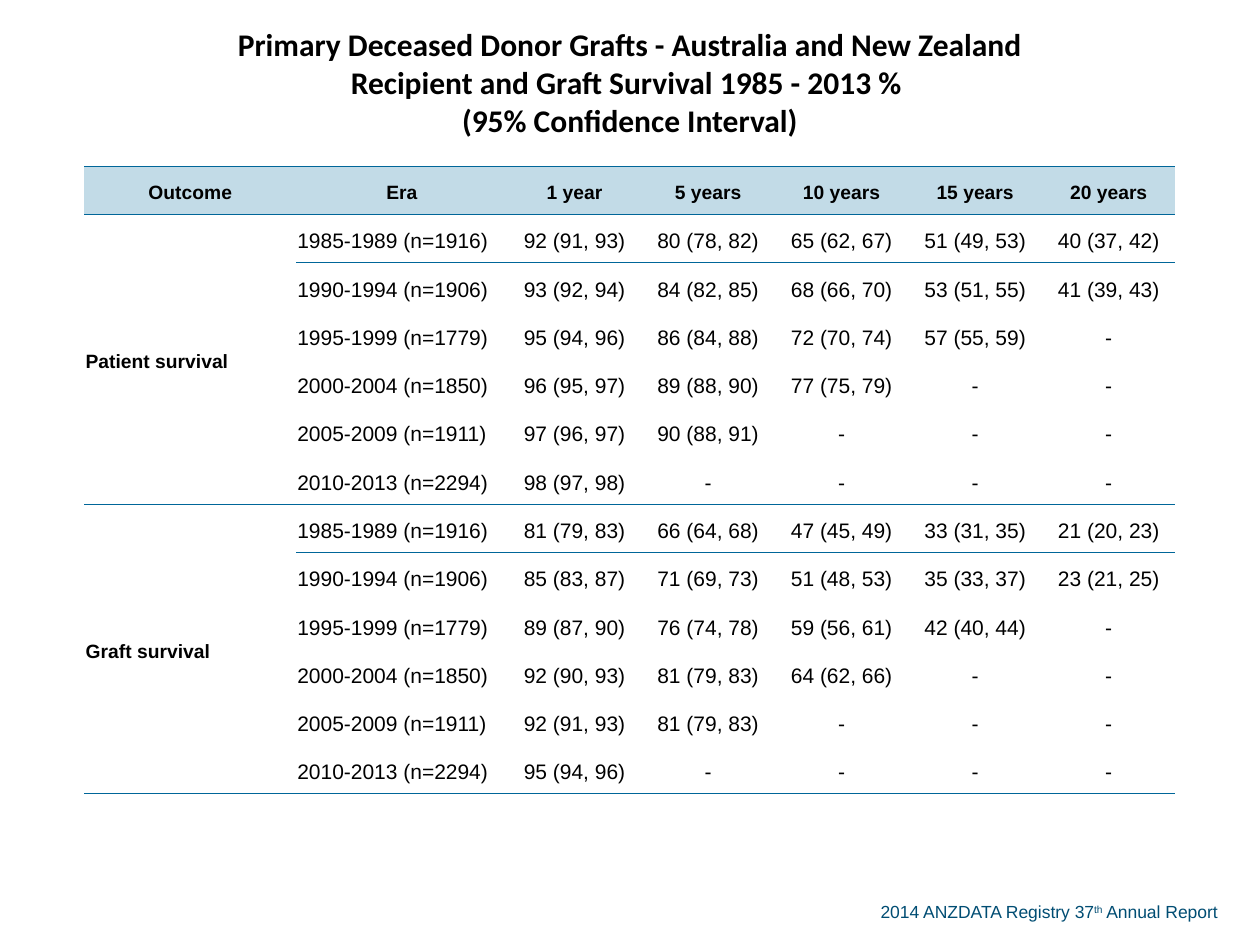
from lxml import etree
from pptx import Presentation
from pptx import util as u
from pptx.dml.color import RGBColor
from pptx.enum import text
from pptx.oxml.ns import qn

COLORS = {"text": "000000", "rule": "006699", "header": "C2DBE7", "footer": "004D73"}
WIDTH, HEIGHT = u.Inches(10), u.Inches(7.5)
NO_GRID_STYLE = "{2D5ABB26-0587-4C30-8999-92F81FD0307C}"

TITLE = ("Primary Deceased Donor Grafts - Australia and New Zealand\v"
         "Recipient and Graft Survival 1985 - 2013 % \n(95% Confidence Interval)")
HEADERS = ["Outcome", "Era", "1 year", "5 years", "10 years", "15 years", "20 years"]
ERAS = ["1985-1989 (n=1916)", "1990-1994 (n=1906)", "1995-1999 (n=1779)",
        "2000-2004 (n=1850)", "2005-2009 (n=1911)", "2010-2013 (n=2294)"]
SURVIVAL = {
    "Patient survival": [
        ["92 (91, 93)", "80 (78, 82)", "65 (62, 67)", "51 (49, 53)", "40 (37, 42)"],
        ["93 (92, 94)", "84 (82, 85)", "68 (66, 70)", "53 (51, 55)", "41 (39, 43)"],
        ["95 (94, 96)", "86 (84, 88)", "72 (70, 74)", "57 (55, 59)"],
        ["96 (95, 97)", "89 (88, 90)", "77 (75, 79)"],
        ["97 (96, 97)", "90 (88, 91)"],
        ["98 (97, 98)"],
    ],
    "Graft survival": [
        ["81 (79, 83)", "66 (64, 68)", "47 (45, 49)", "33 (31, 35)", "21 (20, 23)"],
        ["85 (83, 87)", "71 (69, 73)", "51 (48, 53)", "35 (33, 37)", "23 (21, 25)"],
        ["89 (87, 90)", "76 (74, 78)", "59 (56, 61)", "42 (40, 44)"],
        ["92 (90, 93)", "81 (79, 83)", "64 (62, 66)"],
        ["92 (91, 93)", "81 (79, 83)"],
        ["95 (94, 96)"],
    ],
}
COLS = len(HEADERS)
FIRST_ROW = 2
ROWS = FIRST_ROW + len(ERAS) * len(SURVIVAL)
COL_WIDTHS = [1.68] * 2 + [1.06] * 5
TITLE_HEIGHT, BODY_HEIGHT = 1.32, 4.98
# Row boundaries that carry a horizontal rule
RULES = {1, *range(FIRST_ROW, ROWS + 1, len(ERAS))}


def color(name):
    return RGBColor.from_string(COLORS[name])


def style_font(font, size, name="Arial", bold=False, ink="text"):
    font.size, font.name, font.bold = u.Pt(size), name, bold
    font.color.rgb = color(ink)


def add_rule(cell, side):
    ln = etree.SubElement(cell._tc.get_or_add_tcPr(), qn(f"a:{side}"), w=str(u.Pt(0.5)))
    fill = etree.SubElement(ln, qn("a:solidFill"))
    etree.SubElement(fill, qn("a:srgbClr"), val=COLORS["rule"])


def frame_cell(cell, row):
    """Set margins, rules and fill by the cell's place in the grid."""
    cell.margin_left = cell.margin_right = cell.margin_top = u.Inches(0.01)
    cell.margin_bottom = 0
    cell.vertical_anchor = text.MSO_ANCHOR.MIDDLE
    if row in RULES:
        add_rule(cell, "lnT")
    if row + (cell.span_height if cell.is_merge_origin else 1) in RULES:
        add_rule(cell, "lnB")
    if row == 1:
        cell.fill.solid()
        cell.fill.fore_color.rgb = color("header")
    else:
        cell.fill.background()


def write_cell(cell, words, size, bold=False, centred=True):
    cell.text_frame.text = words
    p = cell.text_frame.paragraphs[0]
    p.alignment = text.PP_ALIGN.CENTER if centred else text.PP_ALIGN.LEFT
    p.line_spacing, p.space_after = 1.19, u.Pt(14)
    style_font(p.runs[0].font, size, bold=bold)


def write_title(cell):
    cell.text_frame.text = TITLE
    for p in cell.text_frame.paragraphs:
        p.alignment = text.PP_ALIGN.CENTER
        style_font(p.font, 18, "Calibri", True)
        for r in p.runs:
            style_font(r.font, 18, "Calibri", True)


def add_survival_table(s):
    height = u.Inches(TITLE_HEIGHT + BODY_HEIGHT)
    gf = s.shapes.add_table(ROWS, COLS, u.Inches(0.67), 0, u.Inches(sum(COL_WIDTHS)), height)
    tbl = gf.table
    tbl.first_row = tbl.horz_banding = False
    tbl._tbl.tblPr.find(qn("a:tableStyleId")).text = NO_GRID_STYLE
    for col, width in zip(tbl.columns, COL_WIDTHS):
        col.width = u.Inches(width)
    for i, row in enumerate(tbl.rows):
        row.height = u.Inches(BODY_HEIGHT / (ROWS - 1) if i else TITLE_HEIGHT)

    tbl.cell(0, 0).merge(tbl.cell(0, COLS - 1))
    write_title(tbl.cell(0, 0))
    for c, header in enumerate(HEADERS):
        write_cell(tbl.cell(1, c), header, 11, bold=True)
    for g, (outcome, rates) in enumerate(SURVIVAL.items()):
        top = FIRST_ROW + g * len(ERAS)
        tbl.cell(top, 0).merge(tbl.cell(top + len(ERAS) - 1, 0))
        write_cell(tbl.cell(top, 0), outcome, 11, bold=True, centred=False)
        for i, (era, values) in enumerate(zip(ERAS, rates)):
            write_cell(tbl.cell(top + i, 1), era, 12, centred=False)
            for c in range(2, COLS):
                value = values[c - 2] if c - 2 < len(values) else "-"
                write_cell(tbl.cell(top + i, c), value, 12)
    for r in range(ROWS):
        for c in range(COLS):
            frame_cell(tbl.cell(r, c), r)


def add_footer(s):
    sp = s.shapes.add_textbox(int(WIDTH * 0.689), int(HEIGHT * 0.947),
                              u.Inches(2.99), u.Inches(0.27))
    tf = sp.text_frame
    tf.word_wrap = False
    p = tf.paragraphs[0]
    for words in ("2014 ANZDATA Registry 37", "th", " Annual Report"):
        r = p.add_run()
        r.text = words
        style_font(r.font, 10, ink="footer")
    p.runs[1].font._element.set("baseline", "30000")


def main():
    prs = Presentation()
    prs.slide_width, prs.slide_height = WIDTH, HEIGHT
    s = prs.slides.add_slide(prs.slide_layouts[6])
    add_footer(s)
    add_survival_table(s)
    prs.save("out.pptx")


if __name__ == "__main__":
    main()
